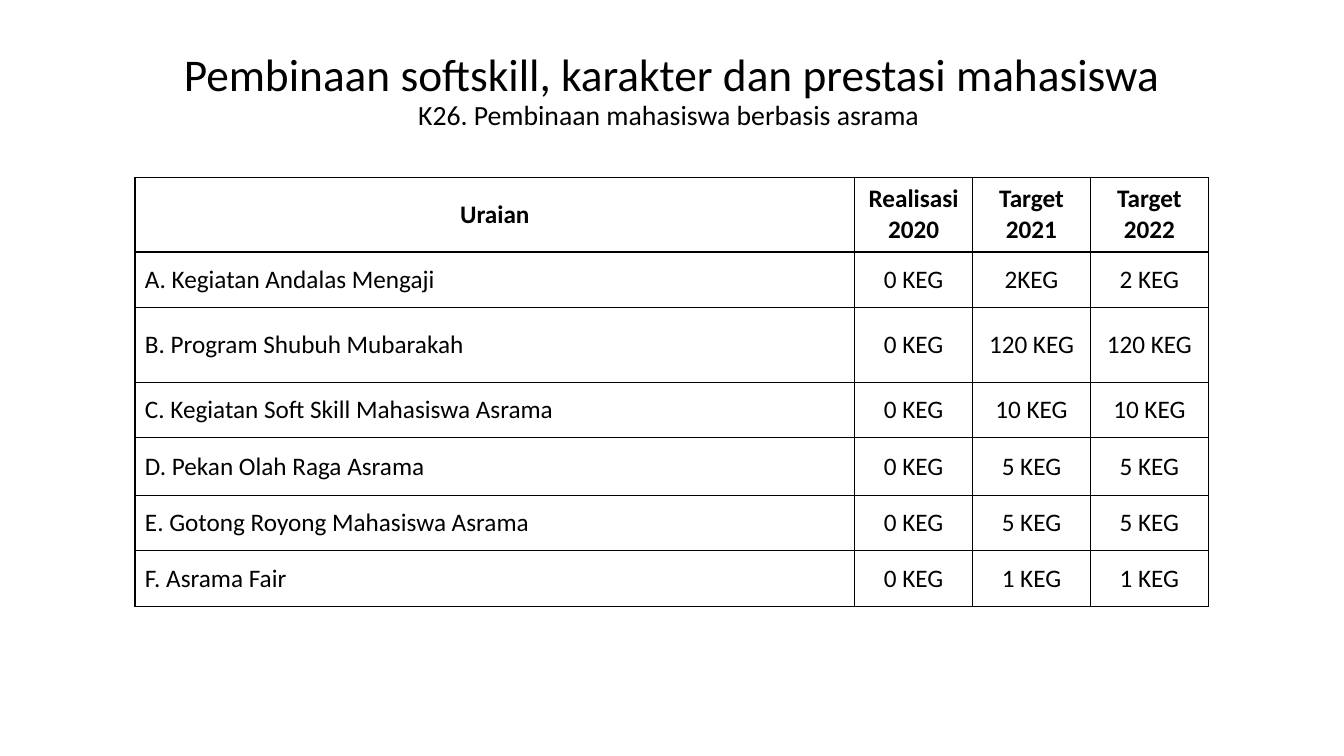
"""Build the slide on dormitory-based student development targets."""
from lxml.etree import SubElement
from pptx import Presentation
from pptx.dml.color import RGBColor
from pptx.enum.text import MSO_ANCHOR as Anchor, PP_ALIGN as Align
from pptx.oxml.ns import qn
from pptx.util import Cm, Pt

COLORS = {"ink": "000000", "paper": "FFFFFF"}
FONT = "Calibri"
TITLE_SIZES = (32.4, 19.8)
COLUMN_WIDTHS = (18.14, 2.97, 2.97, 2.97)
ROW_HEIGHTS = (1.88, 1.4, 1.88, 1.4, 1.45, 1.4, 1.4)
ROWS = (
    ("Uraian", "Realisasi\n2020", "Target\n2021", "Target\n2022"),
    ("A. Kegiatan Andalas Mengaji", "0 KEG", "2KEG", "2 KEG"),
    ("B. Program Shubuh Mubarakah", "0 KEG", "120 KEG", "120 KEG"),
    ("C. Kegiatan Soft Skill Mahasiswa Asrama", "0 KEG", "10 KEG", "10 KEG"),
    ("D. Pekan Olah Raga Asrama", "0 KEG", "5 KEG", "5 KEG"),
    ("E. Gotong Royong Mahasiswa Asrama", "0 KEG", "5 KEG", "5 KEG"),
    ("F. Asrama Fair", "0 KEG", "1 KEG", "1 KEG"),
)


def format_span(span, size, bold=False):
    span.font.name = FONT
    span.font.size = Pt(size)
    span.font.bold = bold
    span.font.color.rgb = RGBColor.from_string(COLORS["ink"])


def add_title(page):
    title = page.shapes.title
    title.left, title.top = Cm(3.5), Cm(0.94)
    title.width, title.height = Cm(26.85), Cm(2.74)
    frame = title.text_frame
    frame.word_wrap = True
    frame.vertical_anchor = Anchor.MIDDLE
    frame.text = ("Pembinaan softskill, karakter dan prestasi mahasiswa\v"
                  "K26. Pembinaan mahasiswa berbasis asrama ")
    para = frame.paragraphs[0]
    para.alignment = Align.CENTER
    para.line_spacing = 0.9
    for span, size in zip(para.runs, TITLE_SIZES):
        format_span(span, size)
    line_break = para._p.find(qn("a:br"))
    SubElement(line_break, qn("a:rPr"), sz=str(round(TITLE_SIZES[0] * 100)))


def add_borders(cell):
    properties = cell._tc.get_or_add_tcPr()
    for side in ("lnL", "lnR", "lnT", "lnB"):
        line = SubElement(properties, qn(f"a:{side}"), w=str(Pt(1)))
        fill = SubElement(line, qn("a:solidFill"))
        SubElement(fill, qn("a:srgbClr"), val=COLORS["ink"])


def fill_cell(cell, text, centered, bold):
    add_borders(cell)
    cell.fill.solid()
    cell.fill.fore_color.rgb = RGBColor.from_string(COLORS["paper"])
    cell.vertical_anchor = Anchor.MIDDLE
    cell.text_frame.text = text
    for para in cell.text_frame.paragraphs:
        para.alignment = Align.CENTER if centered else Align.LEFT
        for span in para.runs:
            format_span(span, 18, bold)


def add_target_table(page):
    frame = page.shapes.add_table(
        len(ROWS), len(COLUMN_WIDTHS), Cm(3.4), Cm(4.47),
        Cm(sum(COLUMN_WIDTHS)), Cm(sum(ROW_HEIGHTS)))
    table = frame.table
    for column, width in zip(table.columns, COLUMN_WIDTHS):
        column.width = Cm(width)
    for row, height in zip(table.rows, ROW_HEIGHTS):
        row.height = Cm(height)
    for row_index, texts in enumerate(ROWS):
        header = row_index == 0
        for column_index, text in enumerate(texts):
            fill_cell(table.cell(row_index, column_index), text,
                      centered=header or column_index > 0, bold=header)


def main():
    deck = Presentation()
    deck.slide_width, deck.slide_height = Cm(33.87), Cm(19.05)
    page = deck.slides.add_slide(deck.slide_layouts[5])
    add_title(page)
    add_target_table(page)
    deck.save("out.pptx")


if __name__ == "__main__":
    main()
